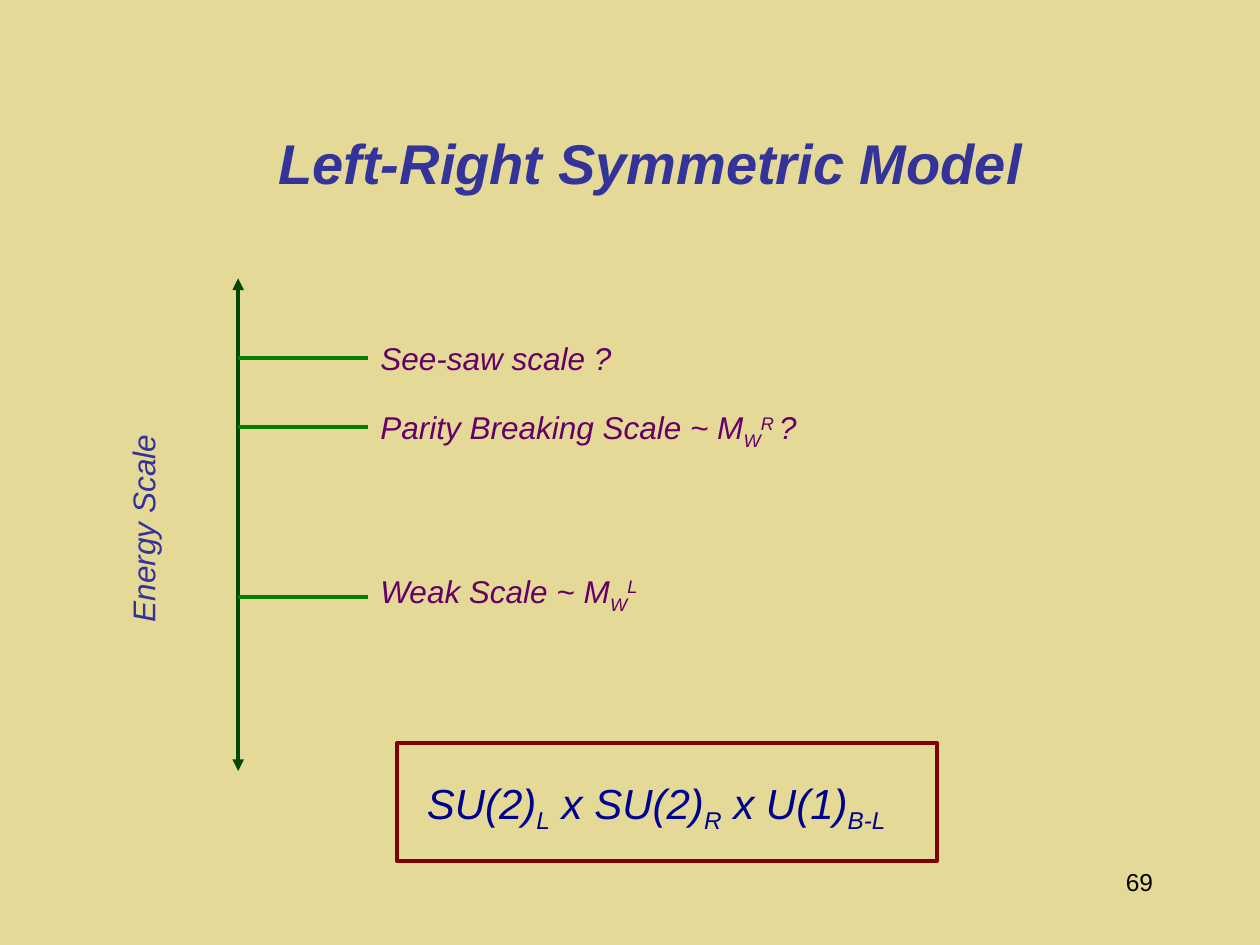
from lxml import etree
from pptx import Presentation
from pptx.dml.color import RGBColor
from pptx.enum.shapes import MSO_CONNECTOR, MSO_SHAPE
from pptx.enum.text import MSO_ANCHOR, PP_ALIGN
from pptx.oxml.ns import qn
from pptx.util import Pt

STRAIGHT = MSO_CONNECTOR.STRAIGHT
RECTANGLE = MSO_SHAPE.RECTANGLE
TOP, MIDDLE = MSO_ANCHOR.TOP, MSO_ANCHOR.MIDDLE
LEFT, RIGHT = PP_ALIGN.LEFT, PP_ALIGN.RIGHT
SUB, SUPER = -25, 30
LINE_WIDTH = 2.25


def color(value):
    """Turn a hex string into a color."""
    return RGBColor.from_string(value)


def add_text(page, box, runs, size, ink, italic=True, bold=False, align=LEFT, anchor=TOP):
    """Write one paragraph from (text, baseline shift) runs."""
    shape = page.shapes.add_textbox(*map(Pt, box))
    frame = shape.text_frame
    frame.word_wrap = True
    frame.vertical_anchor = anchor
    para = frame.paragraphs[0]
    para.alignment = align
    for text, shift in runs:
        span = para.add_run()
        span.text = text
        font = span.font
        font.name, font.size = "Arial", Pt(size)
        font.italic, font.bold = italic, bold
        font.color.rgb = color(ink)
        if shift:
            span._r.get_or_add_rPr().set("baseline", str(shift * 1000))
    return shape


def add_line(page, start, end, ink, arrows=False):
    """Draw a straight line, with arrowheads at both ends if asked."""
    line = page.shapes.add_connector(STRAIGHT, *map(Pt, start + end))
    line.line.color.rgb = color(ink)
    line.line.width = Pt(LINE_WIDTH)
    if arrows:
        outline = line.line._get_or_add_ln()
        for tag in ("a:headEnd", "a:tailEnd"):
            etree.SubElement(outline, qn(tag), type="triangle")
    etree.SubElement(line._element.spPr, qn("a:effectLst"))


def add_energy_axis(page, box, levels):
    """Draw the vertical energy axis with a labelled tick for each level."""
    left, top, width, height = box
    name = add_text(page, (left - 120.4, top + 123.2, 131.8, 28.8),
                    [("Energy Scale", 0)], 18, "333399")
    name.rotation = 270
    add_line(page, (left, top), (left, top + height), "004900", arrows=True)
    for offset, rise, runs in levels:
        tick = top + offset
        add_line(page, (left, tick), (left + width, tick), "008000")
        add_text(page, (left + width, tick - rise, 278.6, 28.8), runs, 18, "660066")


def add_gauge_group(page, box):
    """Frame the gauge group formula."""
    left, top, width, height = box
    formula = [("SU(2)", 0), ("L", SUB), (" x SU(2)", 0), ("R", SUB),
               (" x U(1)", 0), ("B-L", SUB)]
    add_text(page, (left + 10, top + 15.8, 365.8, 36), formula, 24, "000090")
    frame = page.shapes.add_shape(RECTANGLE, *map(Pt, box))
    frame.shadow.inherit = False
    frame.fill.background()
    frame.line.color.rgb = color("800000")
    frame.line.width = Pt(LINE_WIDTH)


def main():
    """Build the slide and save the deck."""
    deck = Presentation()
    deck.slide_width, deck.slide_height = Pt(720), Pt(540)
    page = deck.slides.add_slide(deck.slide_layouts[6])
    page.background.fill.solid()
    page.background.fill.fore_color.rgb = color("E4D997")

    add_text(page, (152, 47.5, 469.4, 90), [("Left-Right Symmetric Model", 0)],
             32, "333399", bold=True, anchor=MIDDLE)
    levels = [
        (45.4, 14.4, [("See-saw scale ?", 0)]),
        (85, 14.4, [("Parity Breaking Scale ~ M", 0), ("W", SUB), ("R ", SUPER), ("?", 0)]),
        (182.2, 18, [("Weak Scale ~ M", 0), ("W", SUB), ("L", SUPER)]),
    ]
    add_energy_axis(page, (136.1, 159.1, 74.2, 281.5), levels)
    add_gauge_group(page, (226.8, 424.8, 308.9, 67))
    add_text(page, (516.2, 491.8, 149.8, 36), [("69", 0)], 14, "000000",
             italic=False, align=RIGHT)
    deck.save("out.pptx")


if __name__ == "__main__":
    main()
